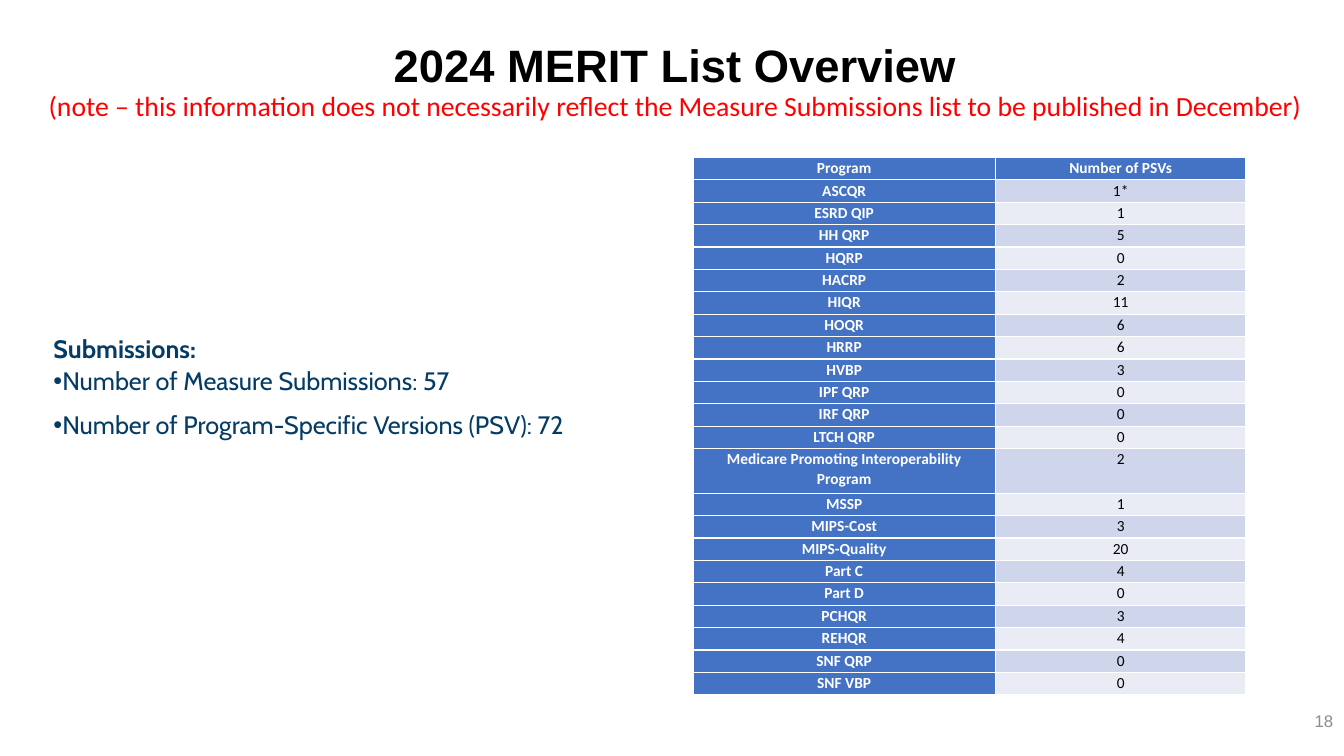
"""Build the 2024 MERIT List Overview slide."""
from lxml import etree
from pptx import Presentation, util as u
from pptx.dml.color import RGBColor
from pptx.enum import text

Pt = u.Pt
BLUE, BANDS = "4472C4", ("E9EBF5", "CFD5EA")
PROGRAMS = [
    ("Program", "Number of PSVs"), ("ASCQR", "1*"), ("ESRD QIP", "1"),
    ("HH QRP", "5"), ("HQRP", "0"), ("HACRP", "2"), ("HIQR", "11"),
    ("HOQR", "6"), ("HRRP", "6"), ("HVBP", "3"), ("IPF QRP", "0"),
    ("IRF QRP", "0"), ("LTCH QRP", "0"),
    ("Medicare Promoting Interoperability Program", "2"), ("MSSP", "1"),
    ("MIPS-Cost", "3"), ("MIPS-Quality", "20"), ("Part C", "4"),
    ("Part D", "0"), ("PCHQR", "3"), ("REHQR", "4"), ("SNF QRP", "0"),
    ("SNF VBP", "0"),
]


def paint(fmt, color):
    if hasattr(fmt, "solid"):
        fmt.solid()
        fmt = fmt.fore_color
    else:
        fmt = fmt.color
    fmt.rgb = RGBColor.from_string(color)


def add_run(p, words, name, size, color, bold=False):
    r = p.add_run()
    r.text = words
    for key, value in {"name": name, "size": Pt(size), "bold": bold}.items():
        setattr(r.font, key, value)
    paint(r.font, color)


prs = Presentation()
prs.slide_width, prs.slide_height = Pt(960), Pt(540)
s = prs.slides.add_slide(prs.slide_layouts[1])
title, body = s.shapes.title, s.placeholders[1]
number = s.shapes.add_textbox(0, 0, 0, 0)

frames = [
    (title, (9.5, 16, 945, 87), text.MSO_ANCHOR.MIDDLE),
    (body, (31, 233, 449, 236), text.MSO_ANCHOR.TOP),
    (number, (803.5, 500.5, 156, 29), text.MSO_ANCHOR.MIDDLE),
]
for sp, box, anchor in frames:
    for key, value in zip(("left", "top", "width", "height"), box):
        setattr(sp, key, Pt(value))
    tf = sp.text_frame
    for key, value in {"word_wrap": True, "vertical_anchor": anchor,
                       "auto_size": text.MSO_AUTO_SIZE.NONE}.items():
        setattr(tf, key, value)

p = title.text_frame.paragraphs[0]
p.alignment, p.line_spacing = text.PP_ALIGN.CENTER, 0.9
add_run(p, "2024 MERIT List Overview", "Arial", 32.4, "000000", True)
p.add_line_break()
add_run(p, "(note – this information does not necessarily reflect the Measure "
        "Submissions list to be published in December)", "Calibri", 19.8, "FF0000")

lines = [
    ("Submissions:", False, 0),
    ("Number of Measure Submissions: 57", True, 8),
    ("Number of Program-Specific Versions (PSV): 72", True, 0),
]
tf = body.text_frame
for i, (words, bullet, after) in enumerate(lines):
    p = tf.add_paragraph() if i else tf.paragraphs[0]
    for key, value in {"line_spacing": 1.07, "space_before": Pt(0),
                       "space_after": Pt(after)}.items():
        setattr(p, key, value)
    add_run(p, words, "Cabin", 18, "053C65", not bullet)
    pPr = p._p.get_or_add_pPr()
    pPr.set("marL", "0")
    pPr.set("indent", "0")
    ns = "{" + pPr.nsmap["a"] + "}"
    if bullet:
        etree.SubElement(pPr, ns + "buFont").set("typeface", "Arial")
        etree.SubElement(pPr, ns + "buChar").set("char", "•")
    else:
        etree.SubElement(pPr, ns + "buNone")

table = s.shapes.add_table(len(PROGRAMS), 2, Pt(495), Pt(112.5), Pt(395), Pt(384)).table
table.first_col = True
table.columns[0].width, table.columns[1].width = Pt(216), Pt(179)
for i, row in enumerate(PROGRAMS):
    table.rows[i].height = Pt(32 if len(row[0]) > 30 else 16)
    for j, words in enumerate(row):
        heading = i == 0 or j == 0
        cell = table.cell(i, j)
        for key, value in {"margin_left": 5, "margin_right": 5,
                           "margin_top": 0, "margin_bottom": 0}.items():
            setattr(cell, key, Pt(value))
        paint(cell.fill, BLUE if heading else BANDS[i % 2])
        p = cell.text_frame.paragraphs[0]
        p.alignment, p.line_spacing = text.PP_ALIGN.CENTER, 1.07
        add_run(p, words, "Calibri", 11, "FFFFFF" if heading else "000000", heading)

p = number.text_frame.paragraphs[0]
p.alignment = text.PP_ALIGN.RIGHT
add_run(p, "18", "Arial", 12, "8C8C8C")

prs.save("out.pptx")
